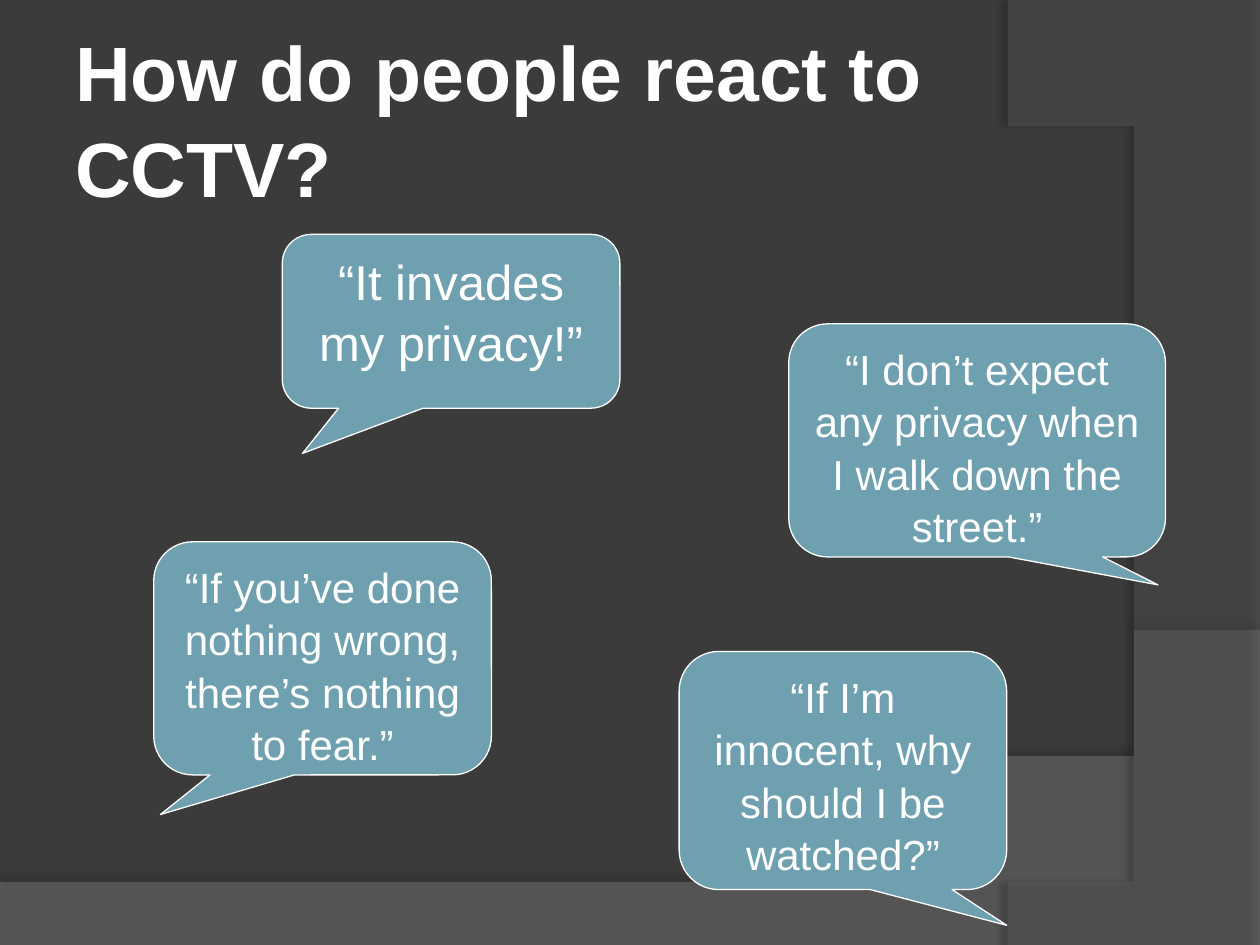
from lxml import etree
from pptx import Presentation
from pptx import util as u
from pptx.dml.color import RGBColor
from pptx.enum import shapes, text
from pptx.oxml import ns

WIDTH, HEIGHT = 10, 7.5
FONT = "Arial"
DARK = RGBColor(0x3B, 0x3B, 0x3B)
WAVE_GREY = RGBColor(0x7F, 0x7F, 0x7F)
ARC_GREY = RGBColor(0x5E, 0x5E, 0x5E)
TEAL = RGBColor(0x6E, 0xA0, 0xB0)
WHITE = RGBColor(0xFF, 0xFF, 0xFF)

# Bands: box, fill, opacity, corners, curve controls and end (shares of box),
# shadow as opacity, blur, distance, direction
BANDS = [
    ((0, 5.2, 10, 2.3), WAVE_GREY, 45, [(0, 0.8), (0, 1), (1, 1), (1, 0)],
     [(0.56, 0.91), (0.39, 0.87), (0, 0.8)], (35, 4, 3.5, 270)),
    ((8, 0, 2, 7.5), ARC_GREY, 40, [(1, 0), (1, 1), (0.1, 1)],
     [(0.68, 0.83), (1.09, 0.4), (0, 0)], (45, 4, 4, 180)),
]

# Quotes: box, tail tip from the centre (shares of box), size, wording
QUOTES = [
    ((2.24, 1.86, 2.68, 1.38), (-0.44, 0.76), 28, "“It invades my privacy!”"),
    ((6.26, 2.57, 2.99, 1.85), (0.48, 0.62), 24,
     "“I don’t expect any privacy when I walk down the street.”"),
    ((1.22, 4.3, 2.68, 1.85), (-0.48, 0.67), 24,
     "“If you’ve done nothing wrong, there’s nothing to fear.”"),
    ((5.39, 5.17, 2.6, 1.89), (0.5, 0.65), 24,
     "“If I’m innocent, why should I be watched?”"),
]


def inches(box):
    return [u.Inches(length) for length in box]


def bezier(start, first, second, end, steps=60):
    """Points along a cubic curve, without its start."""
    points = []
    for step in range(1, steps + 1):
        t = step / steps
        weights = ((1 - t) ** 3, 3 * t * (1 - t) ** 2, 3 * t * t * (1 - t), t ** 3)
        points.append(tuple(
            sum(w * point[axis] for w, point in zip(weights, (start, first, second, end)))
            for axis in (0, 1)))
    return points


def add_child(parent, tag, **attributes):
    values = {name: str(value) for name, value in attributes.items()}
    return etree.SubElement(parent, ns.qn(tag), values)


def add_band(page, box, colour, opacity, corners, curve, shadow):
    left, top, width, height = box
    outline = corners + bezier(corners[-1], *curve)
    points = [(left + x * width, top + y * height) for x, y in outline]
    builder = page.shapes.build_freeform(*points[0], scale=u.Inches(1))
    builder.add_line_segments(points[1:], close=True)
    band = builder.convert_to_shape()
    band.fill.solid()
    band.fill.fore_color.rgb = colour
    band.line.fill.background()

    # Transparency and soft edge shadow
    properties = band.element.spPr
    fill_colour = properties.find(ns.qn("a:solidFill"))[0]
    add_child(fill_colour, "a:alpha", val=opacity * 1000)
    strength, blur, distance, direction = shadow
    effects = add_child(properties, "a:effectLst")
    outer = add_child(effects, "a:outerShdw", blurRad=u.Pt(blur), dist=u.Pt(distance),
                      dir=direction * 60000, algn="ctr", rotWithShape=0)
    shade = add_child(outer, "a:srgbClr", val="000000")
    add_child(shade, "a:alpha", val=strength * 1000)


def set_text(shape, wording, size, anchor, align, bold=False):
    frame = shape.text_frame
    frame.text = wording
    frame.word_wrap = True
    frame.vertical_anchor = anchor
    para = frame.paragraphs[0]
    para.alignment = align
    para.line_spacing = 1.04
    font = para.runs[0].font
    font.name, font.size, font.bold = FONT, u.Pt(size), bold
    font.color.rgb = WHITE


def add_title(page, box, wording):
    title = page.shapes.add_textbox(*inches(box))
    set_text(title, wording, 44, text.MSO_ANCHOR.MIDDLE, text.PP_ALIGN.LEFT, bold=True)


def add_quote(page, box, tip, size, wording):
    kind = shapes.MSO_SHAPE.ROUNDED_RECTANGULAR_CALLOUT
    bubble = page.shapes.add_shape(kind, *inches(box))
    bubble.shadow.inherit = False
    bubble.adjustments[0], bubble.adjustments[1] = tip
    bubble.fill.solid()
    bubble.fill.fore_color.rgb = TEAL
    bubble.line.color.rgb = WHITE
    bubble.line.width = u.Pt(0.75)
    set_text(bubble, wording, size, text.MSO_ANCHOR.TOP, text.PP_ALIGN.CENTER)


def main():
    deck = Presentation()
    deck.slide_width, deck.slide_height = inches((WIDTH, HEIGHT))
    page = deck.slides.add_slide(deck.slide_layouts[6])
    page.background.fill.solid()
    page.background.fill.fore_color.rgb = DARK

    for band in BANDS:
        add_band(page, *band)
    add_title(page, (0.5, 0.3, 9, 1.25), "How do people react to CCTV?")
    for quote in QUOTES:
        add_quote(page, *quote)
    deck.save("out.pptx")


if __name__ == "__main__":
    main()
